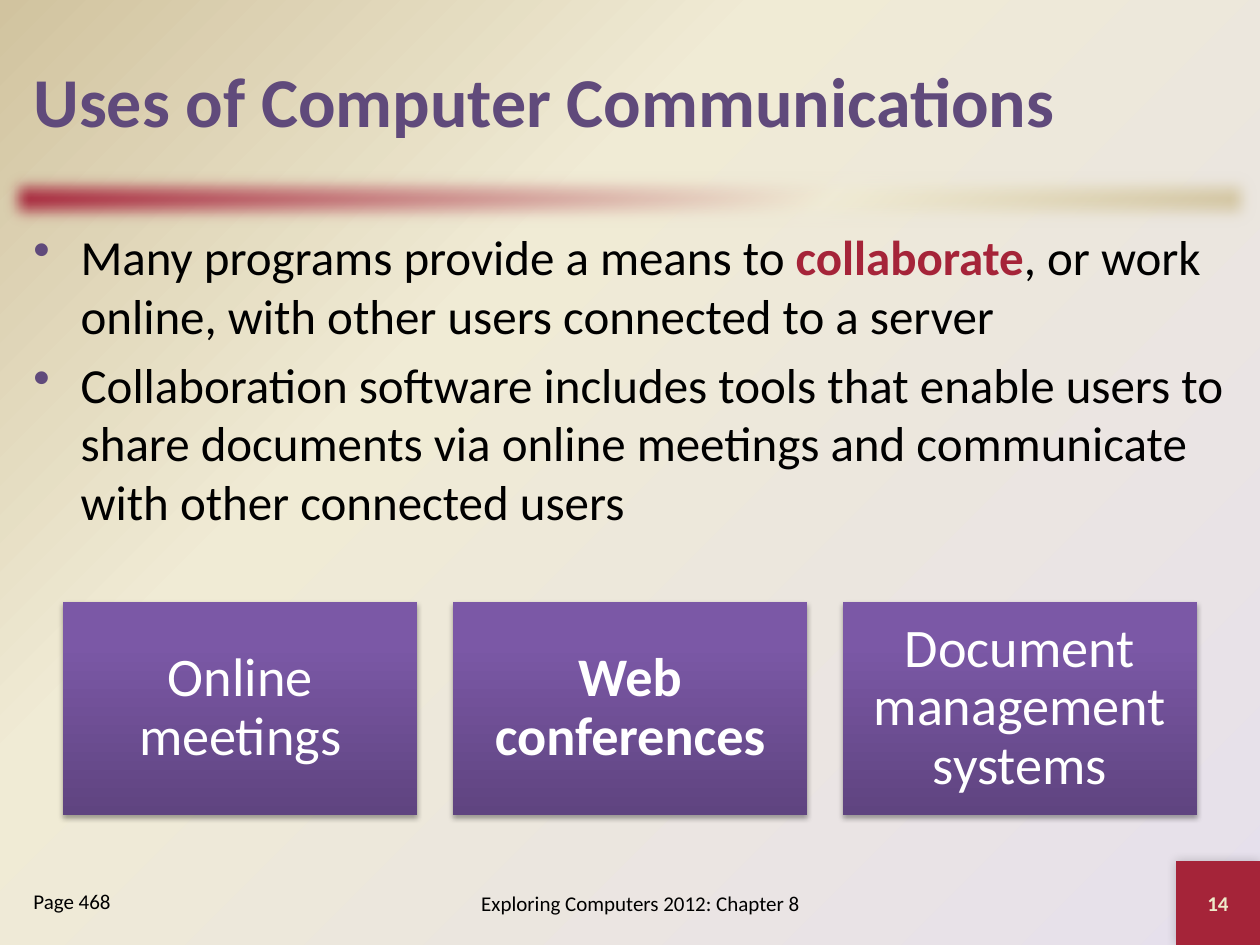
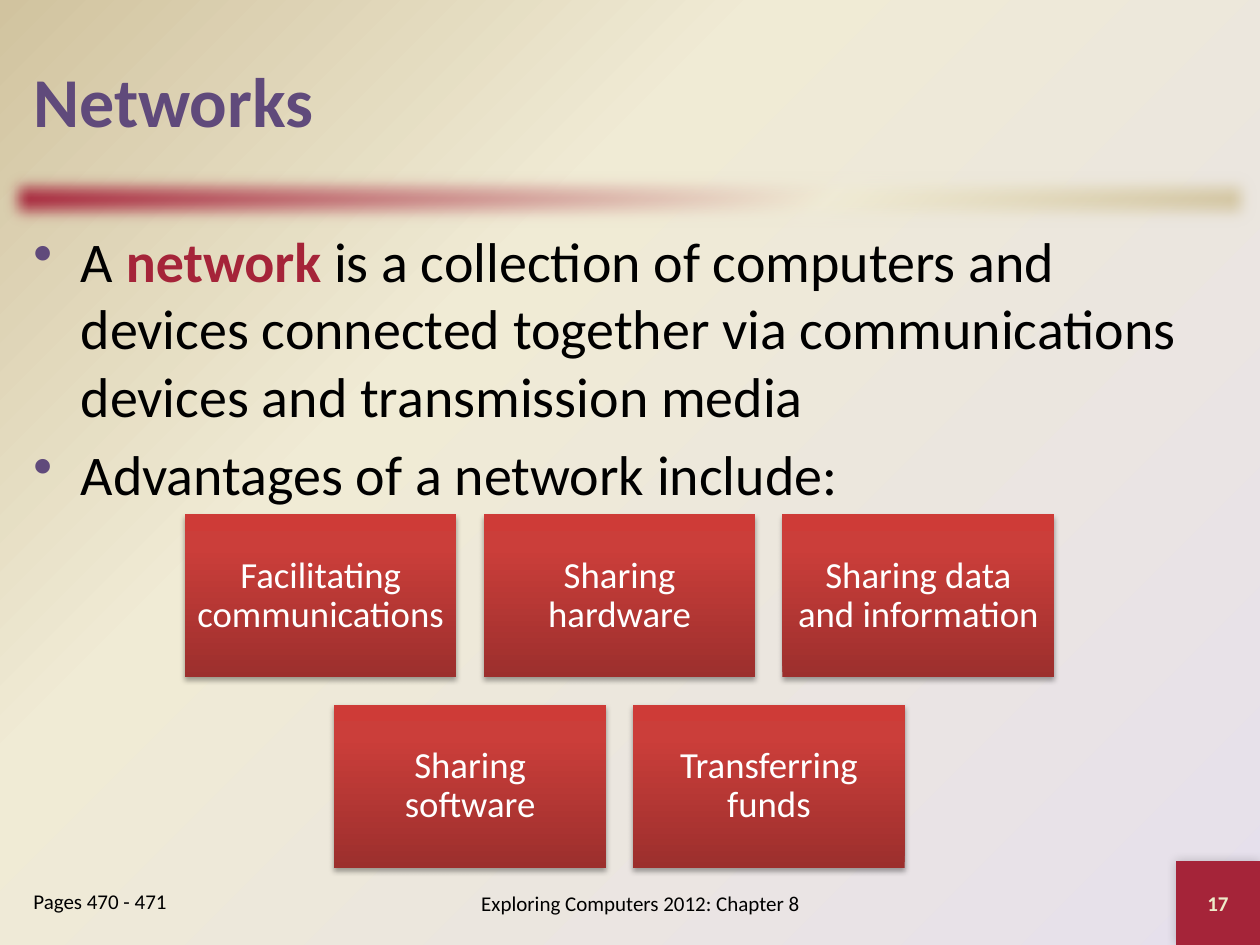
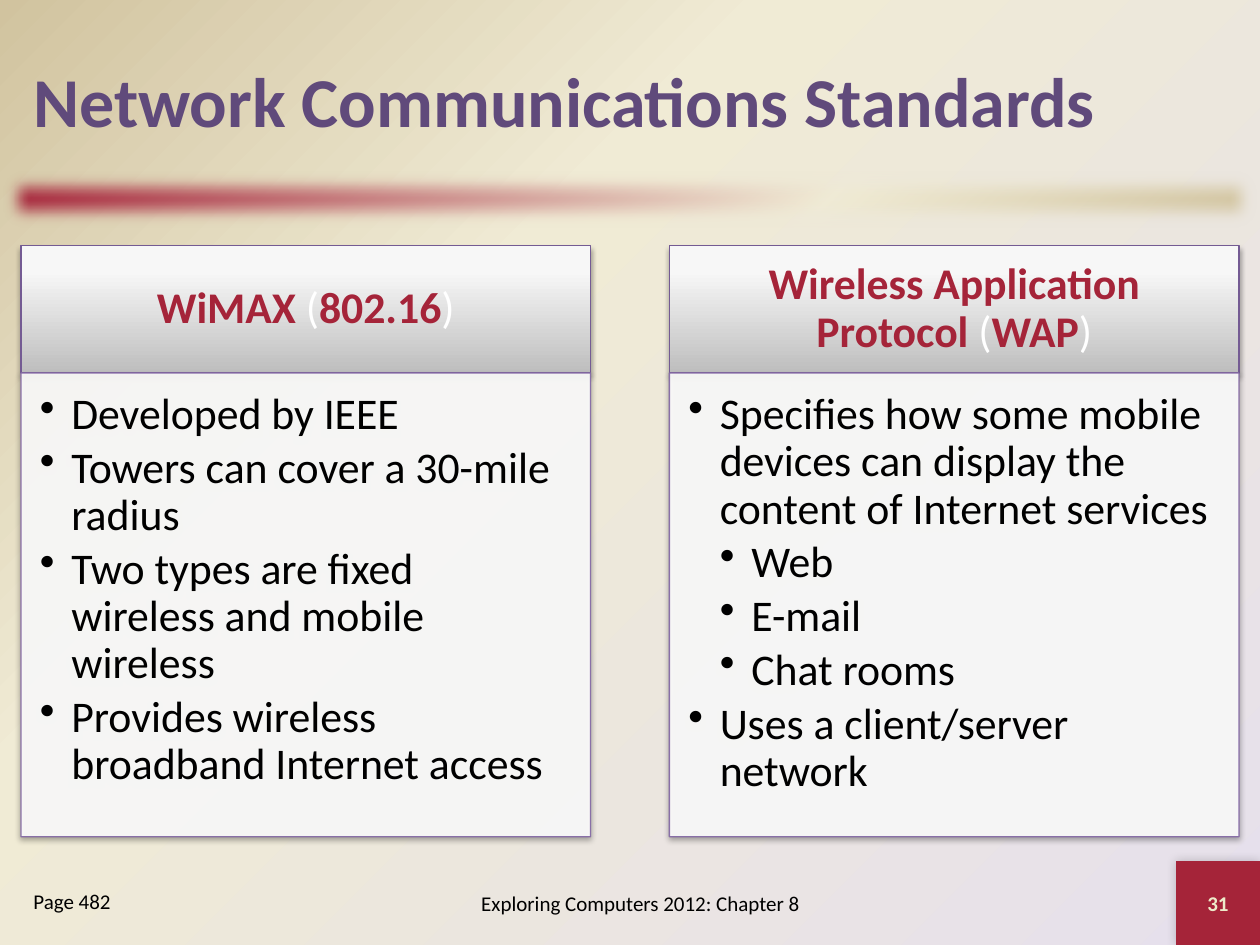
from lxml.etree import SubElement
from pptx import Presentation
from pptx.dml.color import RGBColor
from pptx.enum.shapes import MSO_SHAPE as Shape
from pptx.enum.text import MSO_ANCHOR as Anchor, PP_ALIGN as Align
from pptx.oxml import parse_xml
from pptx.oxml.ns import nsdecls, qn
from pptx.util import Pt

FONT = "Calibri"
BLACK = RGBColor(0x00, 0x00, 0x00)
WHITE = RGBColor(0xFF, 0xFF, 0xFF)
CRIMSON = RGBColor(0xA5, 0x24, 0x39)
PURPLE = RGBColor(0x60, 0x4A, 0x7B)
CREAM = RGBColor(0xEE, 0xEB, 0xCA)
SAND = RGBColor(0xF0, 0xEB, 0xD5)
TAN = RGBColor(0xD1, 0xC3, 0x9F)
LAVENDER = RGBColor(0xE6, 0xE0, 0xEC)
HEADER_LINE = RGBColor(0x74, 0x5B, 0x93)
PANEL_LINE = RGBColor(0x80, 0x64, 0xA2)

# Gradient stops: (position in percent, colour)
PAGE_STOPS = [(0, LAVENDER), (65, SAND), (100, TAN)]
BAND_STOPS = [(0, CRIMSON), (65, SAND), (100, TAN)]
PURPLE_STOPS = [(0, RGBColor(0x5F, 0x44, 0x80)), (80, RGBColor(0x7B, 0x58, 0xA6)),
                (100, RGBColor(0x7C, 0x57, 0xA8))]
RED_STOPS = [(0, RGBColor(0x9C, 0x2F, 0x2D)), (80, RGBColor(0xCB, 0x3E, 0x3A)),
             (100, RGBColor(0xCE, 0x3B, 0x37))]
GREY_STOPS = [(0, RGBColor(0xBE, 0xBE, 0xBE)), (80, RGBColor(0xF7, 0xF7, 0xF7)),
              (100, RGBColor(0xF8, 0xF8, 0xF8))]

# Shadows: opacity in percent, blur, distance, direction in degrees
TILE_SHADOW = (35, 3.1, 1.8, 90)
BADGE_SHADOW = (20, 6, 0, 225)

PAGE_WIDTH, PAGE_HEIGHT = 720, 540
MARGIN = 12
CONTENT_WIDTH = PAGE_WIDTH - 2 * MARGIN
BADGE = 48
FOOTER = "Exploring Computers 2012: Chapter 8"


def set_gradient(owner, fill, stops, angle=None):
    """Fill with the stops, linear at an angle or radial from the bottom right."""
    fill.gradient()
    old = owner.element.find(".//" + qn("a:gradFill"))
    marks = "".join(f'<a:gs pos="{pos * 1000}"><a:srgbClr val="{color}"/></a:gs>'
                    for pos, color in stops)
    if angle is None:
        shade = '<a:path path="circle"><a:fillToRect l="100000" t="100000"/></a:path>'
    else:
        shade = f'<a:lin ang="{angle * 60000}" scaled="0"/>'
    old.getparent().replace(old, parse_xml(
        f'<a:gradFill {nsdecls("a")} rotWithShape="1"><a:gsLst>{marks}</a:gsLst>'
        f'{shade}</a:gradFill>'))


def add_effect(shape, name, **attributes):
    effects = shape.element.spPr.find(qn("a:effectLst"))
    return SubElement(effects, qn(name), {key: str(value) for key, value in attributes.items()})


def add_shadow(shape, opacity, blur, distance, direction):
    shadow = add_effect(shape, "a:outerShdw", blurRad=Pt(blur), dist=Pt(distance),
                        dir=direction * 60000, algn="ctr", rotWithShape=0)
    color = SubElement(shadow, qn("a:srgbClr"), val=str(BLACK))
    SubElement(color, qn("a:alpha"), val=str(opacity * 1000))


def set_opacity(shape, percent):
    for color in shape.element.spPr.iter(qn("a:srgbClr")):
        SubElement(color, qn("a:alpha"), val=str(percent * 1000))


def add_rect(page, left, top, width, height, fill, line=None, angle=270):
    """Draw a rectangle filled with one colour or a list of gradient stops."""
    rect = page.shapes.add_shape(Shape.RECTANGLE, Pt(left), Pt(top), Pt(width), Pt(height))
    rect.shadow.inherit = False
    if isinstance(fill, list):
        set_gradient(rect, rect.fill, fill, angle)
    else:
        rect.fill.solid()
        rect.fill.fore_color.rgb = fill
    if line is None:
        rect.line.fill.background()
    else:
        rect.line.color.rgb = line
        rect.line.width = Pt(0.75)
    return rect


def set_frame(box, anchor, insets=(7.2, 3.6, 7.2, 3.6)):
    frame = box.text_frame
    frame.word_wrap = True
    frame.vertical_anchor = anchor
    (frame.margin_left, frame.margin_top,
     frame.margin_right, frame.margin_bottom) = map(Pt, insets)
    return frame


def write(para, text, size, color, bold=False, align=Align.LEFT, key_color=CRIMSON):
    """Fill a paragraph; words between asterisks are bold key terms."""
    para.alignment = align
    for index, part in enumerate(text.split("*")):
        if part:
            is_key = index % 2 == 1
            span = para.add_run()
            span.text = part
            span.font.name = FONT
            span.font.size = Pt(size)
            span.font.bold = bold or is_key
            span.font.color.rgb = key_color if is_key else color


def add_label(page, left, top, width, height, text, size, color,
              anchor=Anchor.MIDDLE, **style):
    box = page.shapes.add_textbox(Pt(left), Pt(top), Pt(width), Pt(height))
    write(set_frame(box, anchor).paragraphs[0], text, size, color, **style)


def set_bullet(para, left, hanging, color):
    props = para._p.get_or_add_pPr()
    props.set("marL", str(Pt(left)))
    props.set("indent", str(Pt(-hanging)))
    paint = SubElement(props, qn("a:buClr"))
    SubElement(paint, qn("a:srgbClr"), val=str(color))
    SubElement(props, qn("a:buChar"), char="•")


def next_para(frame, index):
    return frame.add_paragraph() if index else frame.paragraphs[0]


def add_bullets(page, texts, size):
    box = page.shapes.add_textbox(Pt(MARGIN), Pt(126), Pt(CONTENT_WIDTH), Pt(366))
    frame = set_frame(box, Anchor.TOP)
    for index, text in enumerate(texts):
        para = next_para(frame, index)
        write(para, text, size, BLACK)
        para.space_before = Pt(0.2 * size)
        set_bullet(para, 27, 27, PURPLE)


def add_tiles(page, rows, center, top, width, size, stops):
    """Lay out rows of tiles, each row centred, with gaps a tenth of a tile wide."""
    height, gap = 0.6 * width, 0.1 * width
    for row, texts in enumerate(rows):
        start = center - (len(texts) * (width + gap) - gap) / 2
        for column, text in enumerate(texts):
            tile = add_rect(page, start + column * (width + gap),
                            top + row * (height + gap), width, height, stops)
            add_shadow(tile, *TILE_SHADOW)
            para = set_frame(tile, Anchor.MIDDLE, [0.3 * size] * 4).paragraphs[0]
            write(para, text, size, WHITE, align=Align.CENTER, key_color=WHITE)
            para.line_spacing = 0.9


def add_standard(page, left, width, heading, points):
    """Draw a header above a panel of (level, text) points."""
    size, top, header_height = 25, 140.4, 72.7
    header = add_rect(page, left, top, width, header_height, GREY_STOPS, HEADER_LINE)
    add_shadow(header, *TILE_SHADOW)
    para = set_frame(header, Anchor.MIDDLE, (13.7, 7.9, 13.7, 7.9)).paragraphs[0]
    write(para, heading, size, WHITE, align=Align.CENTER)
    para.line_spacing = 0.9

    panel = add_rect(page, left, top + header_height, width, 265, WHITE, PANEL_LINE)
    set_opacity(panel, 90)
    add_shadow(panel, *TILE_SHADOW)
    frame = set_frame(panel, Anchor.TOP, (10.8, 10.8, 13.7, 15.8))
    for index, (level, text) in enumerate(points):
        para = next_para(frame, index)
        write(para, text, size, BLACK)
        para.level = level
        para.line_spacing = 0.9
        para.space_after = Pt(0.15 * size)
        set_bullet(para, 18 * level, 18, BLACK)


def add_page(deck, title, source_pages, number):
    """Add a slide with the band, title, footer and page number."""
    page = deck.slides.add_slide(deck.slide_layouts[6])
    band = add_rect(page, 0, 96, PAGE_WIDTH, 36, BAND_STOPS, angle=45)
    add_effect(band, "a:softEdge", rad=Pt(10))
    badge = add_rect(page, PAGE_WIDTH - BADGE, PAGE_HEIGHT - BADGE, BADGE, BADGE, CRIMSON)
    add_shadow(badge, *BADGE_SHADOW)
    write(set_frame(badge, Anchor.MIDDLE).paragraphs[0], str(number), 12, CREAM,
          bold=True, align=Align.CENTER)
    add_label(page, MARGIN, 12, CONTENT_WIDTH, 90, title, 40, PURPLE, bold=True)
    add_label(page, 216, 498, 300, 36, FOOTER, 12, BLACK, align=Align.CENTER)
    add_label(page, MARGIN, 504, 132, 36, source_pages, 12, BLACK, anchor=Anchor.TOP)
    return page


def main():
    deck = Presentation()
    deck.slide_width, deck.slide_height = Pt(PAGE_WIDTH), Pt(PAGE_HEIGHT)
    master = deck.slide_master
    set_gradient(master, master.background.fill, PAGE_STOPS)

    page = add_page(deck, "Uses of Computer Communications", "Page 468", 14)
    add_bullets(page, [
        "Many programs provide a means to *collaborate*, or work online, "
        "with other users connected to a server",
        "Collaboration software includes tools that enable users to share documents "
        "via online meetings and communicate with other connected users",
    ], 28)
    add_tiles(page, [["Online meetings", "*Web conferences*", "Document management systems"]],
              center=360, top=344, width=202.5, size=31, stops=PURPLE_STOPS)

    page = add_page(deck, "Networks", "Pages 470 - 471", 17)
    add_bullets(page, [
        "A *network* is a collection of computers and devices connected together "
        "via communications devices and transmission media",
        "Advantages of a network include:",
    ], 32)
    add_tiles(page, [
        ["Facilitating communications", "Sharing hardware", "Sharing data and information"],
        ["Sharing software", "Transferring funds"],
    ], center=354, top=294, width=155.25, size=21, stops=RED_STOPS)

    page = add_page(deck, "Network Communications Standards", "Page 482", 31)
    width = 325.5
    add_standard(page, MARGIN, width, "*WiMAX* (*802.16*)", [
        (1, "Developed by IEEE"),
        (1, "Towers can cover a 30-mile radius"),
        (1, "Two types are fixed wireless and mobile wireless"),
        (1, "Provides wireless broadband Internet access"),
    ])
    add_standard(page, PAGE_WIDTH - MARGIN - width, width,
                 "*Wireless Application Protocol *(*WAP*)", [
        (1, "Specifies how some mobile devices can display the content of Internet services"),
        (2, "Web"),
        (2, "E-mail"),
        (2, "Chat rooms"),
        (1, "Uses a client/server network"),
    ])
    deck.save("out.pptx")


if __name__ == "__main__":
    main()
